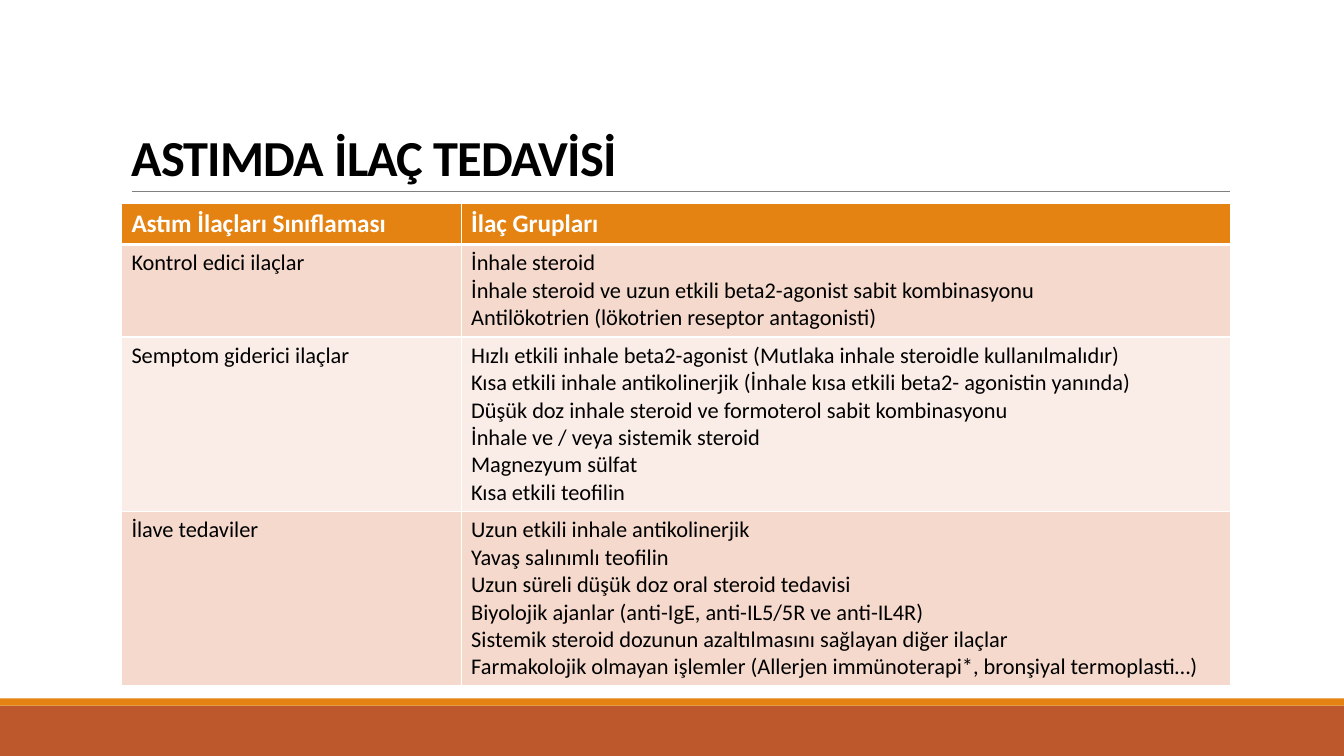
from lxml import etree
from pptx import Presentation
from pptx import util as u
from pptx.dml import color
from pptx.enum import shapes, text
from pptx.oxml import ns

FONT = "Calibri"
WIDTH, HEIGHT = 33.87, 19.05
HEADERS = ["Astım İlaçları Sınıflaması", "İlaç Grupları"]
DRUG_GROUPS = {
    "Kontrol edici ilaçlar": [
        "İnhale steroid",
        "İnhale steroid ve uzun etkili beta2-agonist sabit kombinasyonu",
        "Antilökotrien (lökotrien reseptor antagonisti)",
    ],
    "Semptom giderici ilaçlar": [
        "Hızlı etkili inhale beta2-agonist (Mutlaka inhale steroidle kullanılmalıdır)",
        "Kısa etkili inhale antikolinerjik (İnhale kısa etkili beta2- agonistin yanında)",
        "Düşük doz inhale steroid ve formoterol sabit kombinasyonu",
        "İnhale ve / veya sistemik steroid",
        "Magnezyum sülfat",
        "Kısa etkili teofilin",
    ],
    "İlave tedaviler": [
        "Uzun etkili inhale antikolinerjik",
        "Yavaş salınımlı teofilin",
        "Uzun süreli düşük doz oral steroid tedavisi",
        "Biyolojik ajanlar (anti-IgE, anti-IL5/5R ve anti-IL4R)",
        "Sistemik steroid dozunun azaltılmasını sağlayan diğer ilaçlar",
        "Farmakolojik olmayan işlemler (Allerjen immünoterapi*, bronşiyal termoplasti…)",
    ],
}


def rgb(value):
    return color.RGBColor.from_string(value)


def apply(target, formats):
    for name, value in formats.items():
        setattr(target, name, value)


def write_lines(frame, lines, size, ink, bold=False, **formats):
    for index, line in enumerate(lines):
        paragraph = frame.paragraphs[0] if index == 0 else frame.add_paragraph()
        apply(paragraph, formats)
        run = paragraph.add_run()
        run.text = line
        apply(run.font, {"name": FONT, "size": u.Pt(size), "bold": bold})
        run.font.color.rgb = rgb(ink)


def add_band(slide, left, top, width, height, fill):
    band = slide.shapes.add_shape(
        shapes.MSO_SHAPE.RECTANGLE, u.Cm(left), u.Cm(top), u.Cm(width), u.Cm(height))
    band.shadow.inherit = False
    band.fill.solid()
    band.fill.fore_color.rgb = rgb(fill)
    band.line.fill.background()


def add_footer(slide, left, top, width, height):
    stripe = 0.18
    add_band(slide, left, top + stripe, width, height - stripe, "BD582C")
    add_band(slide, left, top, width, stripe, "E48312")


def add_title(slide, left, top, width, height):
    rule_left, rule_top = left + 0.27, top + height
    rule = slide.shapes.add_connector(
        shapes.MSO_CONNECTOR.STRAIGHT, u.Cm(rule_left), u.Cm(rule_top),
        u.Cm(left + width), u.Cm(rule_top))
    rule.line.color.rgb = rgb("808080")
    rule.line.width = u.Pt(0.5)
    etree.SubElement(rule.element.spPr, ns.qn("a:effectLst"))

    title = slide.shapes.add_textbox(u.Cm(left), u.Cm(top), u.Cm(width), u.Cm(height))
    frame = title.text_frame
    apply(frame, {"word_wrap": True, "vertical_anchor": text.MSO_ANCHOR.BOTTOM})
    write_lines(frame, ["ASTIMDA İLAÇ TEDAVİSİ"], 36, "000000", True, line_spacing=0.85)
    frame.paragraphs[0].runs[0].font._element.set("spc", "-50")


def set_borders(cell, bottom):
    properties = cell._tc.get_or_add_tcPr()
    widths = {"lnL": 1, "lnR": 1, "lnT": 1, "lnB": bottom}
    for index, (side, points) in enumerate(widths.items()):
        line = etree.Element(ns.qn(f"a:{side}"), w=str(u.Pt(points)))
        fill = etree.SubElement(line, ns.qn("a:solidFill"))
        etree.SubElement(fill, ns.qn("a:srgbClr"), val="FFFFFF")
        properties.insert(index, line)


def fill_cell(cell, lines, fill, size, ink, bold=False, bottom=1, **formats):
    cell.fill.solid()
    cell.fill.fore_color.rgb = rgb(fill)
    set_borders(cell, bottom)
    write_lines(cell.text_frame, lines, size, ink, bold, **formats)


def add_drug_table(slide, left, top, width):
    header_height, line_height, padding = 1.03, 0.69, 0.26
    heights = [header_height] + [
        len(drugs) * line_height + padding for drugs in DRUG_GROUPS.values()]
    table = slide.shapes.add_table(
        len(heights), len(HEADERS), u.Cm(left), u.Cm(top),
        u.Cm(width), u.Cm(sum(heights))).table
    first_width = 8.56
    for column, column_width in zip(table.columns, [first_width, width - first_width]):
        column.width = u.Cm(column_width)
    for row, height in zip(table.rows, heights):
        row.height = u.Cm(height)

    for column, header in enumerate(HEADERS):
        fill_cell(table.cell(0, column), [header], "E48312", 18, "FFFFFF", True, 3)
    for row, (group, drugs) in enumerate(DRUG_GROUPS.items(), 1):
        fill = "F5D9CC" if row % 2 else "FAEDE7"
        justified = row == len(DRUG_GROUPS)
        alignment = text.PP_ALIGN.JUSTIFY if justified else text.PP_ALIGN.LEFT
        fill_cell(table.cell(row, 0), [group], fill, 16, "000000")
        fill_cell(table.cell(row, 1), drugs, fill, 16, "000000", alignment=alignment)


def main():
    presentation = Presentation()
    apply(presentation, {"slide_width": u.Cm(WIDTH), "slide_height": u.Cm(HEIGHT)})
    slide = presentation.slides.add_slide(presentation.slide_layouts[6])
    add_footer(slide, 0, 17.6, WIDTH, HEIGHT - 17.6)
    add_title(slide, 3.06, 0.79, 27.94, 4.03)
    add_drug_table(slide, 3.06, 5.13, 27.94)
    presentation.save("out.pptx")


if __name__ == "__main__":
    main()
